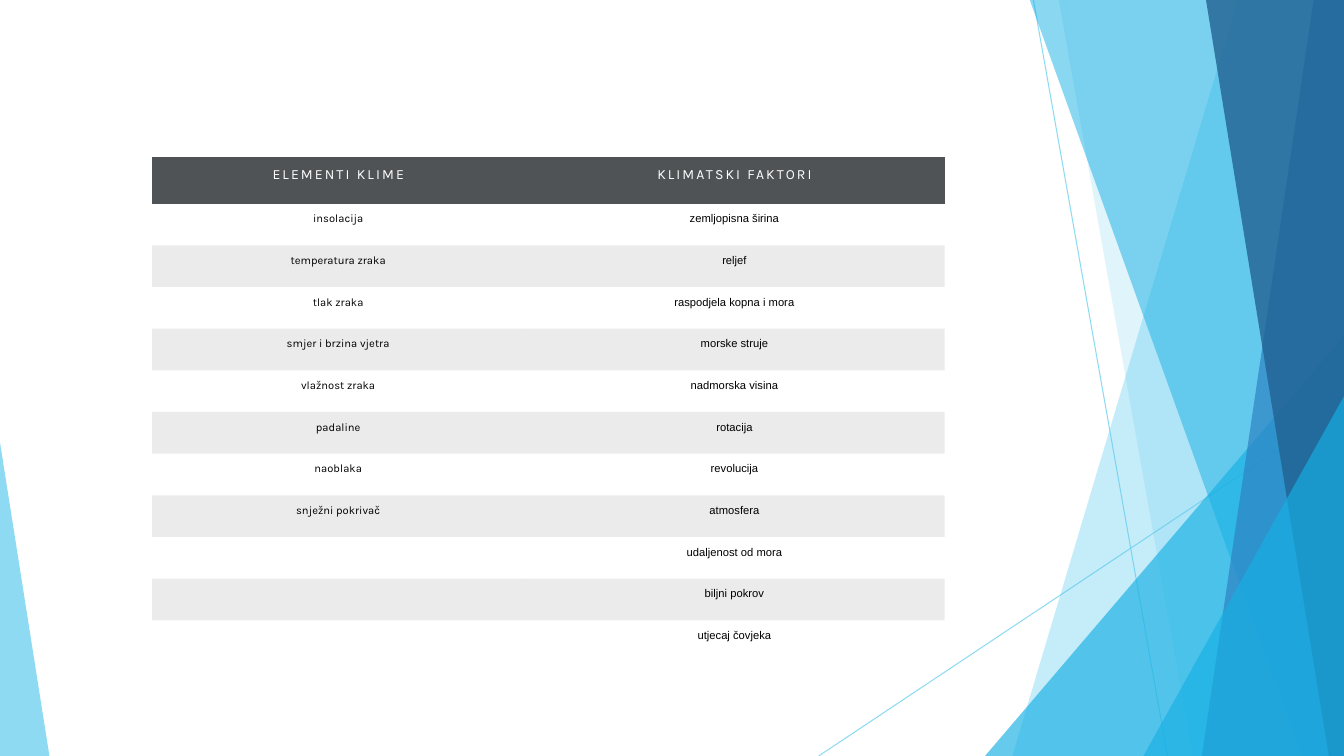
"""Build a slide that lists climate elements and climate factors in a table."""
from dataclasses import dataclass
from itertools import zip_longest

from lxml import etree
from pptx import Presentation
from pptx import util as u
from pptx.dml.color import RGBColor
from pptx.dml.fill import FillFormat
from pptx.enum import shapes, text
from pptx.oxml.ns import qn
from pptx.shapes.autoshape import Shape
from pptx.slide import Slide
from pptx.table import _Cell

COLOURS = {
    "sky": "5FCBEF",
    "cyan": "17B0E4",
    "blue": "2E83C3",
    "navy": "226292",
    "header": "505356",
    "black": "000000",
    "white": "FFFFFF",
}
WIDTH, HEIGHT = 13.33, 7.5
TOP = -0.01
PLAIN_TABLE = "{2D5ABB26-0587-4C30-8999-92F81FD0307C}"
HEADINGS = ("ELEMENTI KLIME", "KLIMATSKI FAKTORI")
ELEMENTS = (
    "insolacija", "temperatura zraka", "tlak zraka", "smjer i brzina vjetra",
    "vlažnost zraka", "padaline", "naoblaka", "snježni pokrivač",
)
FACTORS = (
    "zemljopisna širina", "reljef", "raspodjela kopna i mora", "morske struje",
    "nadmorska visina", "rotacija", "revolucija", "atmosfera",
    "udaljenost od mora", "biljni pokrov", "utjecaj čovjeka",
)


@dataclass(frozen=True)
class Ray:
    """A thin line given by its two ends."""
    start: tuple[float, float]
    end: tuple[float, float]


@dataclass(frozen=True)
class Band:
    """A facet from its upper and lower left corners to the right slide edge."""
    upper: float
    lower: float
    colour: str
    opacity: int


@dataclass(frozen=True)
class Wedge:
    """A triangle on the bottom edge, with its peak at a share of its width."""
    left: float
    top: float
    width: float
    peak: float
    colour: str
    opacity: int


RAYS = (Ray((10.25, 0), (11.58, HEIGHT)), Ray((WIDTH, 4.03), (8.12, HEIGHT)))
FACETS = (
    Band(12.28, 10.04, "sky", 36),
    Band(10.5, 11.83, "sky", 20),
    Wedge(9.77, 3.33, 3.56, 1, "cyan", 66),
    Band(10.21, 12.91, "cyan", 50),
    Band(13.03, 11.92, "blue", 70),
    Band(11.96, 13.18, "navy", 80),
    Wedge(11.34, 3.93, 1.99, 1, "cyan", 66),
    Wedge(0, 4.39, 0.49, 0, "sky", 70),
)


def paint(fill: FillFormat, parent: etree._Element, colour: str, opacity: int = 100) -> None:
    """Give a solid fill its colour and opacity."""
    fill.solid()
    fill.fore_color.rgb = RGBColor.from_string(COLOURS[colour])
    if opacity < 100:
        tint = parent.find(qn("a:solidFill")).find(qn("a:srgbClr"))
        etree.SubElement(tint, qn("a:alpha"), val=str(opacity * 1000))


def draw_ray(page: Slide, ray: Ray) -> None:
    """Draw one thin line."""
    ends = [u.Inches(value) for value in (*ray.start, *ray.end)]
    line = page.shapes.add_connector(shapes.MSO_CONNECTOR.STRAIGHT, *ends)
    line.line.width = u.Pt(0.75)
    properties = line._element.spPr
    paint(line.line.fill, properties.find(qn("a:ln")), "sky", 70)
    etree.SubElement(properties, qn("a:effectLst"))


def outline_band(page: Slide, band: Band) -> Shape:
    """Outline a band that reaches the right edge."""
    corners = [
        (u.Inches(x), u.Inches(y))
        for x, y in ((band.upper, TOP), (WIDTH, TOP), (WIDTH, HEIGHT), (band.lower, HEIGHT))
    ]
    builder = page.shapes.build_freeform(*corners[0])
    builder.add_line_segments(corners[1:], close=True)
    return builder.convert_to_shape()


def outline_wedge(page: Slide, wedge: Wedge) -> Shape:
    """Outline a triangle that stands on the bottom edge."""
    frame = (wedge.left, wedge.top, wedge.width, HEIGHT - wedge.top)
    shape = page.shapes.add_shape(
        shapes.MSO_SHAPE.ISOSCELES_TRIANGLE, *[u.Inches(value) for value in frame]
    )
    shape.adjustments[0] = wedge.peak
    return shape


def draw_facet(page: Slide, facet: Band | Wedge) -> None:
    """Draw one translucent facet."""
    shape = outline_band(page, facet) if isinstance(facet, Band) else outline_wedge(page, facet)
    shape.shadow.inherit = False
    shape.line.fill.background()
    paint(shape.fill, shape._element.spPr, facet.colour, facet.opacity)


def write(cell: _Cell, words: str, *, font: str, size: float, colour: str, spacing: float = 0) -> None:
    """Write centred text into a cell."""
    cell.margin_left = cell.margin_right = u.Inches(0.09)
    cell.margin_top = cell.margin_bottom = u.Inches(0.09)
    cell.vertical_anchor = text.MSO_ANCHOR.TOP
    para = cell.text_frame.paragraphs[0]
    para.alignment = text.PP_ALIGN.CENTER
    if not words:
        etree.SubElement(para._p, qn("a:endParaRPr"), sz=str(int(size * 100)))
        return
    span = para.add_run()
    span.text = words
    span.font.name = font
    span.font.size = u.Pt(size)
    span.font.color.rgb = RGBColor.from_string(COLOURS[colour])
    span.font._element.set("spc", str(int(spacing * 100)))


def draw_table(page: Slide) -> None:
    """Draw the table with its header and shaded alternate rows."""
    pairs = list(zip_longest(ELEMENTS, FACTORS, fillvalue=""))
    frame = page.shapes.add_table(
        len(pairs) + 1, 2, u.Inches(1.51), u.Inches(1.56), u.Inches(7.86), u.Inches(5.01)
    )
    table = frame.table
    table.first_row = table.horz_banding = False
    next(frame._element.iter(qn("a:tableStyleId"))).text = PLAIN_TABLE
    for column, width in zip(table.columns, (3.69, 4.17)):
        column.width = u.Inches(width)
    header_height = u.Inches(0.46)
    for row in table.rows:
        row.height = (u.Inches(5.01) - header_height) // len(pairs)
    table.rows[0].height = header_height

    for cell, heading in zip(table.rows[0].cells, HEADINGS):
        write(cell, heading, font="Karla", size=10, colour="white", spacing=1.5)
        paint(cell.fill, cell._tc.tcPr, "header")
    for number, pair in enumerate(pairs, start=1):
        for cell, words, font in zip(table.rows[number].cells, pair, ("Karla", "Arial")):
            write(cell, words, font=font, size=8, colour="black")
            if number % 2:
                cell.fill.background()
            else:
                paint(cell.fill, cell._tc.tcPr, "black", 8)


def main() -> None:
    """Build and save the deck."""
    deck = Presentation()
    deck.slide_width, deck.slide_height = u.Inches(WIDTH), u.Inches(HEIGHT)
    page = deck.slides.add_slide(deck.slide_layouts[6])
    for ray in RAYS:
        draw_ray(page, ray)
    for facet in FACETS:
        draw_facet(page, facet)
    draw_table(page)
    deck.save("out.pptx")


if __name__ == "__main__":
    main()
